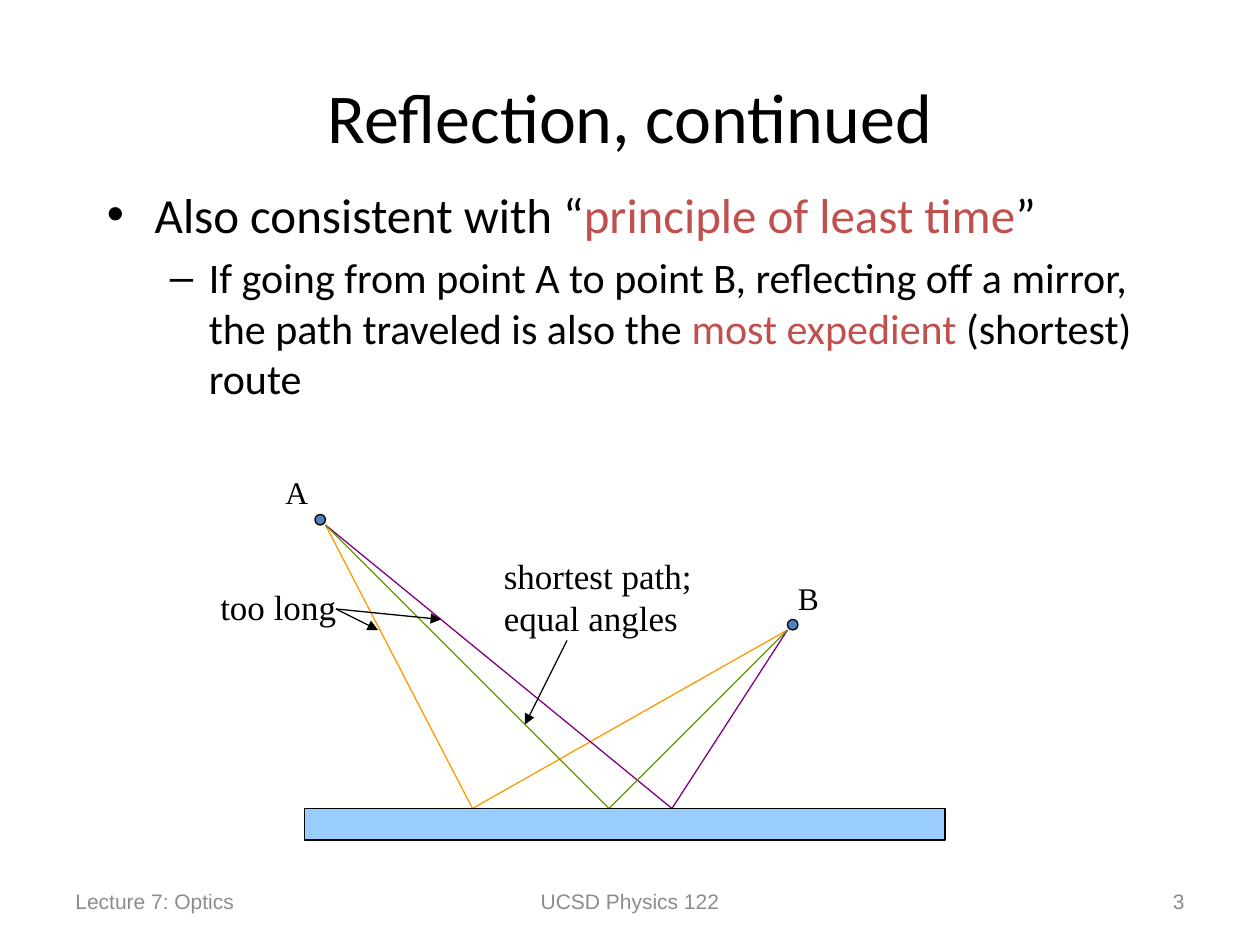
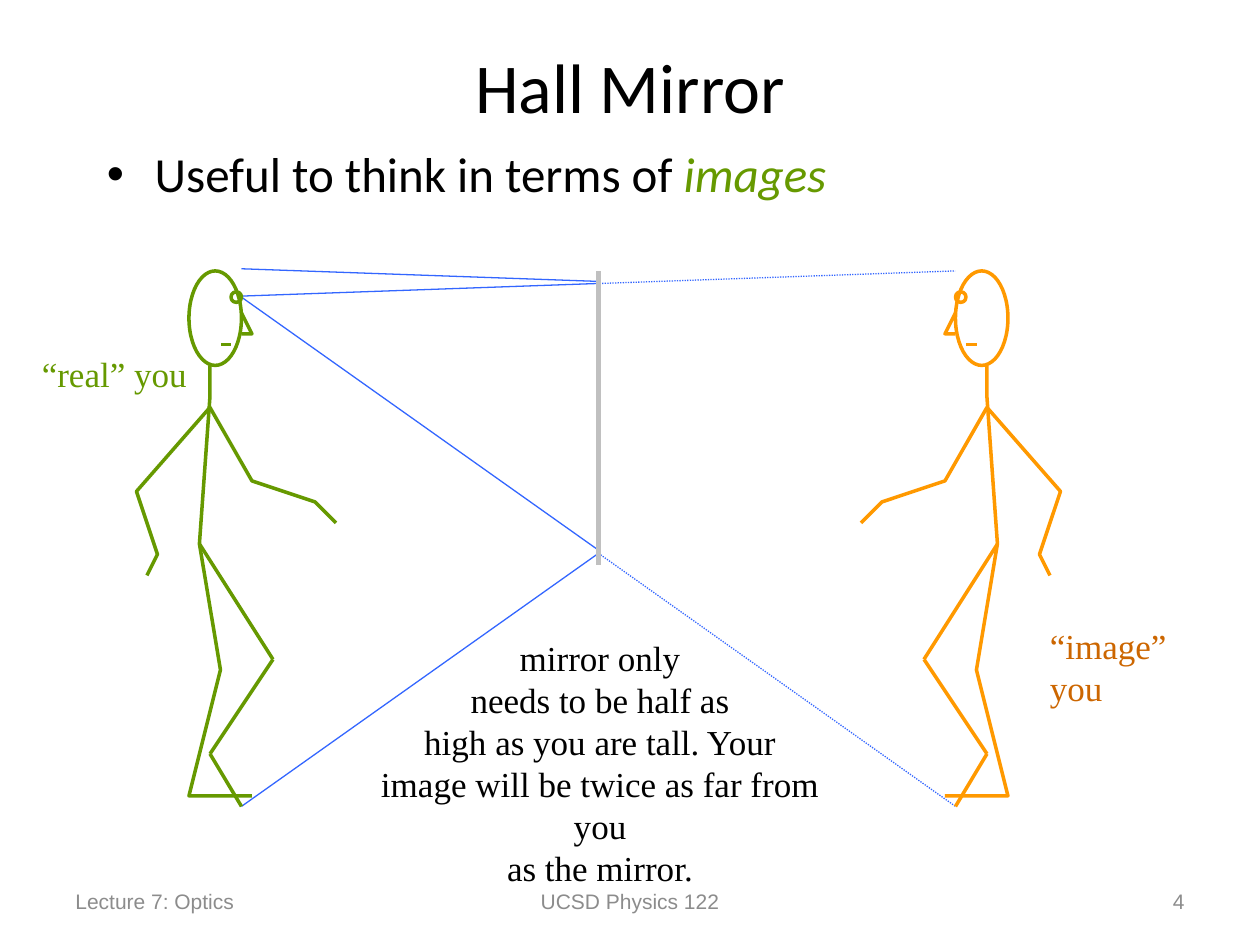
"""Build two optics slides on a grid of 120 columns by 90 rows."""
from lxml import etree
from pptx import Presentation
from pptx.dml.color import RGBColor
from pptx.enum.dml import MSO_LINE
from pptx.enum.shapes import MSO_CONNECTOR, MSO_SHAPE
from pptx.enum.text import MSO_ANCHOR, PP_ALIGN
from pptx.oxml.ns import qn
from pptx.util import Inches, Pt

LEFT, MID, RIGHT = PP_ALIGN.LEFT, PP_ALIGN.CENTER, PP_ALIGN.RIGHT
TOP, CENTER = MSO_ANCHOR.TOP, MSO_ANCHOR.MIDDLE
OVAL, RECT = MSO_SHAPE.OVAL, MSO_SHAPE.RECTANGLE
STRAIGHT, DOTS = MSO_CONNECTOR.STRAIGHT, MSO_LINE.ROUND_DOT
UNIT = Inches(1) // 12
SANS, HEAD, SERIF = "Arial", "Calibri", "Times New Roman"
BLACK, GRAY, SILVER, RED = "000000", "8C8C8C", "C0C0C0", "C0504D"
GREEN, ORANGE, RUST, PURPLE = "669900", "FF9900", "CC6600", "800080"
BLUE, SKY, STEEL = "3366FF", "99CCFF", "4F81BD"


def draw(slide, pts, hue, kind=None, wide=0.75, fill=None, dash=None, arrow=False):
    """Draw a preset shape between two corners, or a line through points."""
    pts = [(round(x * UNIT), round(y * UNIT)) for x, y in pts]
    if kind:
        (x1, y1), (x2, y2) = pts
        item = slide.shapes.add_shape(kind, min(x1, x2), y1, abs(x2 - x1), y2 - y1)
    elif len(pts) == 2:
        item = slide.shapes.add_connector(STRAIGHT, *pts[0], *pts[1])
    else:
        pen = slide.shapes.build_freeform(*pts[0])
        pen.add_line_segments(pts[1:], close=False)
        item = pen.convert_to_shape()
    if fill:
        item.fill.solid()
        item.fill.fore_color.rgb = RGBColor.from_string(fill)
    elif kind or len(pts) > 2:
        item.fill.background()
    item.line.color.rgb = RGBColor.from_string(hue)
    item.line.width = Pt(wide)
    if dash:
        item.line.dash_style = dash
    if arrow:
        ln = item.line._get_or_add_ln()
        etree.SubElement(ln, qn("a:tailEnd"), type="triangle")
    etree.SubElement(item._element.spPr, qn("a:effectLst"))


def write(item, box, text, size, font, hue=BLACK, align=LEFT, anchor=TOP, wrap=True):
    """Place a text shape on the grid, fill it and format its runs."""
    item.left, item.top, item.width, item.height = [round(v * UNIT) for v in box]
    frame = item.text_frame
    frame.text = text
    frame.word_wrap = wrap
    frame.vertical_anchor = anchor
    for para in frame.paragraphs:
        para.alignment = align
        for run in para.runs:
            run.font.size, run.font.name = Pt(size), font
            run.font.color.rgb = RGBColor.from_string(hue)


deck = Presentation()
deck.slide_width, deck.slide_height = 120 * UNIT, 90 * UNIT

# title, title row, body row, paragraphs of (level, runs of (text, colour, italic))
PAGES = [
    ("Reflection, continued", 6, 17, [
        (0, [("Also consistent with “", BLACK, False),
             ("principle of least time", RED, False), ("”", BLACK, False)]),
        (1, [("If going from point A to point B, reflecting off a mirror, "
              "the path traveled is also the ", BLACK, False),
             ("most expedient", RED, False), (" (shortest) route", BLACK, False)])]),
    ("Hall Mirror", 3.1, 13.1, [
        (0, [("Useful to think in terms of ", BLACK, False), ("images", GREEN, True)])]),
]
LEVELS = [(28, 0.38, 0.38, "•"), (24, 0.81, 0.31, "–")]

for num, (title, row, top, body) in enumerate(PAGES, 3):
    slide = deck.slides.add_slide(deck.slide_layouts[5])
    for col, wide, text, align in [(6, 28, "Lecture 7: Optics", LEFT),
                                   (41, 38, "UCSD Physics 122", MID),
                                   (86, 28, str(num), RIGHT)]:
        foot = slide.shapes.add_textbox(0, 0, 0, 0)
        write(foot, (col, 83.4, wide, 4.8), text, 12, SANS, GRAY, align, CENTER)
    write(slide.shapes.title, (9, row, 102, 10), title, 40, HEAD, BLACK, MID, CENTER)
    area = slide.shapes.add_textbox(0, 0, 0, 0)
    write(area, (9, top, 102, 61), "\n" * (len(body) - 1), 28, HEAD)
    for para, (level, runs) in zip(area.text_frame.paragraphs, body):
        size, left, hang, mark = LEVELS[level]
        para.level = level
        para.space_before = Pt(size * 0.2)
        props = para._p.get_or_add_pPr()
        props.set("marL", str(Inches(left)))
        props.set("indent", str(-Inches(hang)))
        etree.SubElement(props, qn("a:buFont"), typeface=SANS)
        etree.SubElement(props, qn("a:buChar"), char=mark)
        for text, hue, slant in runs:
            run = para.add_run()
            run.text = text
            run.font.size, run.font.name = Pt(size), HEAD
            run.font.color.rgb = RGBColor.from_string(hue)
            if slant:
                run.font.italic = True

bounce, hall = deck.slides

for col, hue in [(45, ORANGE), (64, PURPLE), (58, GREEN)]:
    draw(bounce, [(31, 50), (col, 77), (75, 60)], hue)
draw(bounce, [(29, 77), (90, 80)], BLACK, RECT, fill=SKY)
for x, y in [(30, 49), (75, 59)]:
    draw(bounce, [(x, y), (x + 1, y + 1)], BLACK, OVAL, fill=STEEL)
for pts in [[(32, 58), (42, 59)], [(32, 58), (36, 60)], [(54, 61), (50, 69)]]:
    draw(bounce, pts, BLACK, arrow=True)

RAYS = [
    ((23, 28.2), (56.9, 27), None),
    ((57.1, 27), (91, 25.8), DOTS),
    ((56.9, 26.8), (23, 25.6), None),
    ((23, 28.3), (57, 52.4), None),
    ((57, 52.7), (23, 76.8), None),
    ((57, 52.7), (91, 76.8), DOTS),
]
for start, end, dash in RAYS:
    draw(hall, [start, end], BLUE, dash=dash)
draw(hall, [(57, 25.8), (57, 53.8)], SILVER, wide=2.5)

LEG = [(19, 51.8), (26, 62.8), (20, 71.8), (23, 76.8)]
PARTS = [
    (OVAL, [(18, 25.8), (23, 34.8)]),
    (None, [(20, 34.8), (20, 37.8), (19, 51.8), (21, 63.8), (18, 75.8), (24, 75.8)]),
    *[(None, pair) for pair in zip(LEG, LEG[1:])],
    (None, [(32, 49.8), (30, 47.8), (24, 45.8), (20, 38.8),
            (13, 46.8), (15, 52.8), (14, 54.8)]),
    (None, [(23, 29.8), (24, 31.8), (23, 31.8)]),
    (None, [(22, 32.8), (21, 32.8)]),
    (OVAL, [(22, 27.8), (23, 28.8)]),
]
for hue, flip in [(ORANGE, True), (GREEN, False)]:
    for kind, pts in PARTS:
        draw(hall, [(114 - x if flip else x, y) for x, y in pts], hue, kind, 2)

LABELS = [
    (bounce, (26, 44.5, 5.3, 6), "A", 18, BLACK),
    (bounce, (74.8, 54.6, 5, 6), "B", 18, BLACK),
    (bounce, (19.8, 55.2, 13.4, 5.2), "too long", 20, BLACK),
    (bounce, (46.8, 52.2, 20.3, 9.2), "shortest path;\nequal angles", 20, BLACK),
    (hall, (98.8, 58.9, 19.3, 5.2), "“image” you", 20, RUST),
    (hall, (2.8, 33, 16.2, 5.2), "“real” you", 20, GREEN),
]
for slide, box, text, size, hue in LABELS:
    label = slide.shapes.add_textbox(0, 0, 0, 0)
    write(label, box, text, size, SERIF, hue, wrap=False)
note = hall.shapes.add_textbox(0, 0, 0, 0)
write(note, (32.2, 60, 49.9, 21.2),
      "mirror only\nneeds to be half as\nhigh as you are tall. Your\n"
      "image will be twice as far from you\nas the mirror.", 20, SERIF, align=MID)

deck.save("out.pptx")
